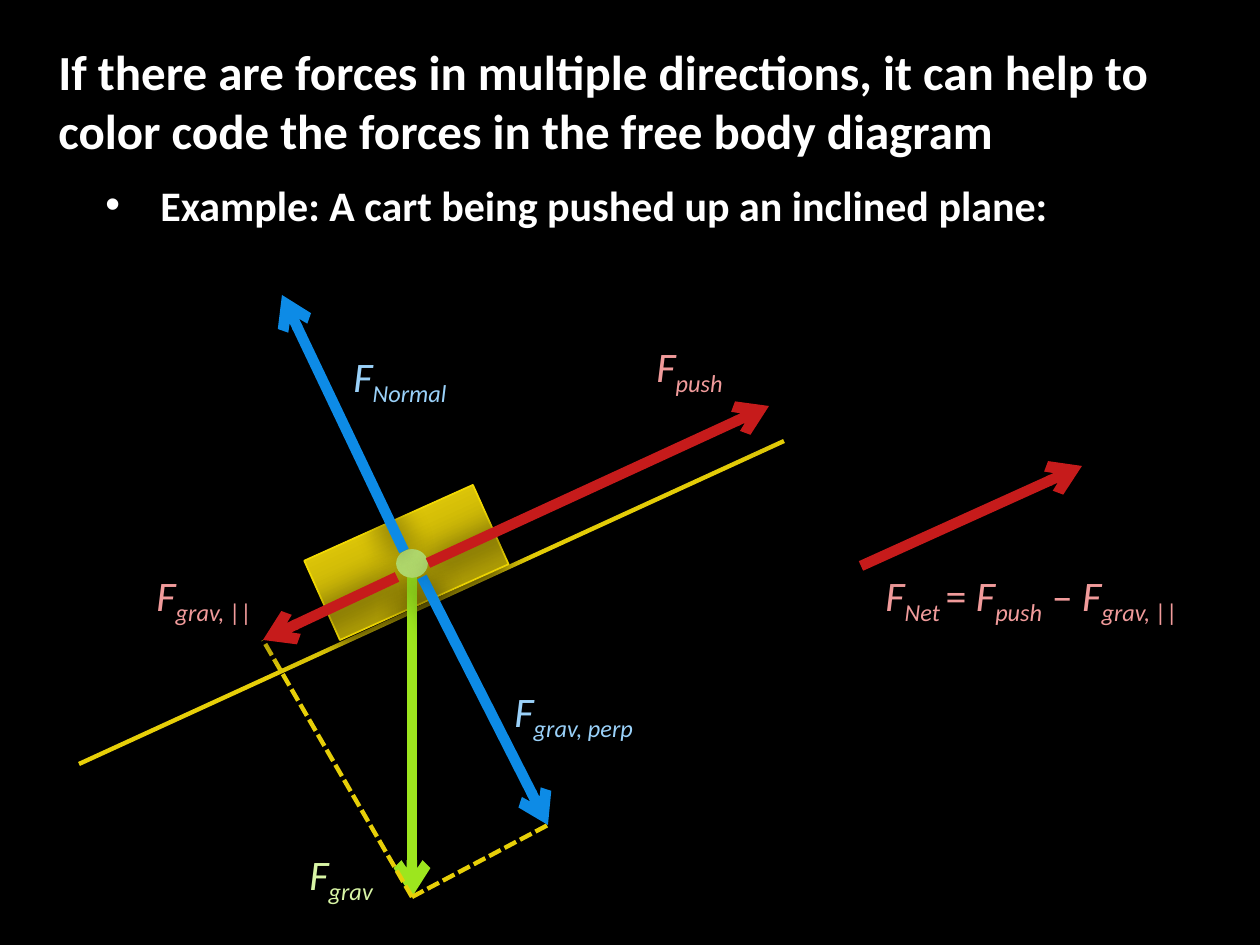
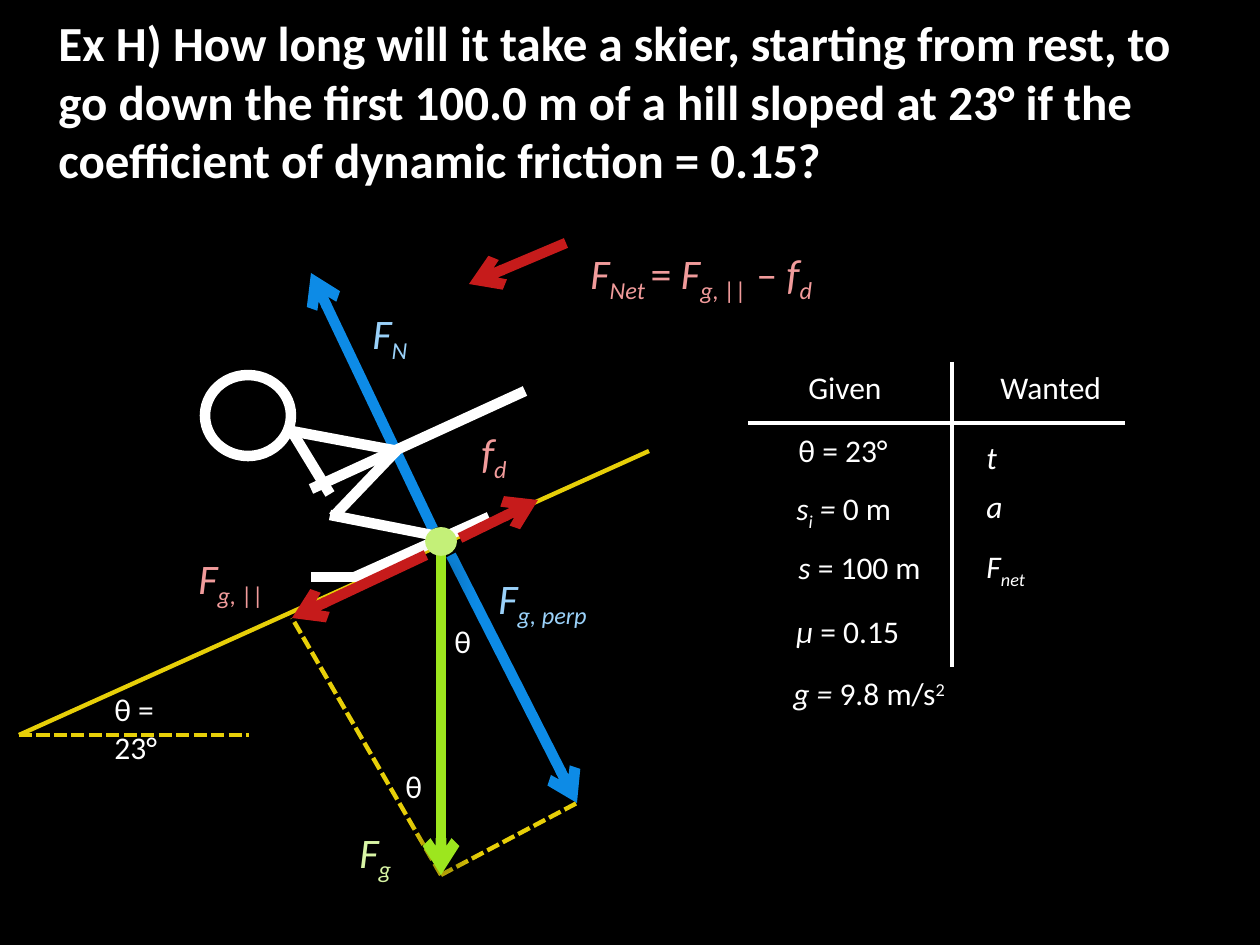
from dataclasses import dataclass
from typing import Any

from pptx import Presentation
from pptx.dml.color import RGBColor
from pptx.enum.dml import MSO_LINE
from pptx.enum.shapes import MSO_CONNECTOR, MSO_SHAPE
from pptx.enum.text import MSO_ANCHOR
from pptx.oxml import parse_xml
from pptx.oxml.ns import nsdecls
from pptx.util import Pt

STRAIGHT = MSO_CONNECTOR.STRAIGHT
RECT, OVAL = MSO_SHAPE.RECTANGLE, MSO_SHAPE.OVAL
DASHED = MSO_LINE.SQUARE_DOT
TOP, MIDDLE = MSO_ANCHOR.TOP, MSO_ANCHOR.MIDDLE

SCALE = 914400 / 126
COLORS = {
    "back": "000000", "text": "FFFFFF", "plane": "E7CF08",
    "blue": "0D8BE6", "red": "C61B1B", "green": "9DE61E", "mass": "C4F078",
    "blue_text": "9AD1F9", "red_text": "F19B9B", "green_text": "D8F5A5",
    "cart_dark": "8F8105", "cart_light": "FFE552", "cart_edge": "F2D902",
}
TITLE = {"size": Pt(28), "bold": True}
BULLET = {"size": Pt(24), "bold": True}
FORCE = {"size": Pt(24)}
NOTE = {"size": Pt(18)}
BASELINES = {"_": "-25000", "^": "30000"}

# Tips of the forces, measured from the mass
GRAVITY_TIP, PERP_TIP = (0, 334), (136, 262)
NORMAL_TIP, PARALLEL_TIP = (-130, -268), (-149, 77)


def px(value):
    return round(value * SCALE)


def rgb(name):
    return RGBColor.from_string(COLORS[name])


def add_shadow(shape):
    effects = parse_xml(
        f'<a:effectLst {nsdecls("a")}><a:outerShdw blurRad="{Pt(18)}" dist="{Pt(3)}" '
        'dir="5400000" rotWithShape="0"><a:srgbClr val="000000">'
        '<a:alpha val="80000"/></a:srgbClr></a:outerShdw></a:effectLst>')
    sp_pr = shape._element.spPr
    for old in sp_pr.findall(effects.tag):
        sp_pr.remove(old)
    sp_pr.append(effects)


def force(symbol, sub):
    return [(symbol, "i"), (sub, "i_")]


@dataclass
class Region:
    """Part of a slide with its own origin; all lengths are in px."""
    s: Any
    left: int
    top: int

    def line(self, start, end, color="plane", width=2.5, dashed=False):
        points = [px(v) for x, y in (start, end)
                  for v in (self.left + x, self.top + y)]
        cxn = self.s.shapes.add_connector(STRAIGHT, *points)
        cxn.line.color.rgb = rgb(color)
        cxn.line.width = Pt(width)
        if dashed:
            cxn.line.dash_style = DASHED
        cxn._element.spPr.append(parse_xml(f'<a:effectLst {nsdecls("a")}/>'))
        return cxn

    def arrow(self, start, end, color, shadow=True):
        cxn = self.line(start, end, color, 6)
        cxn.line._get_or_add_ln().append(
            parse_xml(f'<a:tailEnd {nsdecls("a")} type="arrow"/>'))
        if shadow:
            add_shadow(cxn)

    def shape(self, kind, x, y, w, h, edge, width, fill=None):
        sp = self.s.shapes.add_shape(
            kind, px(self.left + x), px(self.top + y), px(w), px(h))
        sp.shadow.inherit = False
        sp.line.color.rgb = rgb(edge)
        sp.line.width = Pt(width)
        if fill:
            sp.fill.solid()
            sp.fill.fore_color.rgb = rgb(fill)
        else:
            sp.fill.background()
        return sp

    def text(self, x, y, w, h, runs, fmt, color="text", anchor=TOP):
        box = self.s.shapes.add_textbox(
            px(self.left + x), px(self.top + y), px(w), px(h))
        tf = box.text_frame
        tf.word_wrap = True
        tf.vertical_anchor = anchor
        p = tf.paragraphs[0]
        for content, style in runs:
            r = p.add_run()
            r.text = content
            values = {"name": "Calibri", "italic": "i" in style, **fmt}
            for key, value in values.items():
                setattr(r.font, key, value)
            r.font.color.rgb = rgb(color)
            for mark, baseline in BASELINES.items():
                if mark in style:
                    r._r.get_or_add_rPr().set("baseline", baseline)
        return p

    def label(self, x, y, runs, color, w=194):
        self.text(x, y, w, 63, runs, FORCE, color)

    def note(self, x, y, runs, w=166):
        self.text(x, y, w, 50, runs, NOTE)


def new_slide(prs, title):
    s = prs.slides.add_slide(prs.slide_layouts[6])
    s.background.fill.solid()
    s.background.fill.fore_color.rgb = rgb("back")
    Region(s, 46, 31).text(0, 0, 1154, 139, [(title, "")], TITLE, anchor=MIDDLE)
    return s


def add_bullet(region, text):
    p = region.text(0, 0, 1045, 91, [(text, "")], BULLET)
    p_pr = p._p.get_or_add_pPr()
    p_pr.set("marL", str(px(55)))
    p_pr.set("indent", str(px(-55)))
    p_pr.append(parse_xml(f'<a:buFont {nsdecls("a")} typeface="Arial"/>'))
    p_pr.append(parse_xml(f'<a:buChar {nsdecls("a")} char="•"/>'))


# Forces around the mass, which sits at the origin of the region
def gravity_and_mass(region):
    region.arrow((0, 14), GRAVITY_TIP, "green")
    region.shape(OVAL, -15, -13, 30, 27, "mass", 1, "mass")


def forces_across_slope(region):
    region.arrow((10, 14), PERP_TIP, "blue")
    region.arrow((-8, -12), NORMAL_TIP, "blue")
    for tip in (PERP_TIP, PARALLEL_TIP):
        region.line(GRAVITY_TIP, tip, dashed=True)


def forces_along_slope(region, uphill_start, uphill_tip, shadow=True):
    region.arrow((-15, 14), PARALLEL_TIP, "red", shadow)
    region.arrow(uphill_start, uphill_tip, "red", shadow)


def force_labels(region, labels):
    for x, y, symbol, sub, color in labels:
        region.label(x, y, force(symbol, sub), color)


def cart(region):
    sp = region.shape(RECT, -98, -44, 185, 87, "cart_edge", 1)
    sp.rotation = 335.8
    stops = "".join(
        f'<a:gs pos="{pos}000"><a:srgbClr val="{COLORS[name]}"/></a:gs>'
        for pos, name in ((0, "cart_dark"), (80, "plane"), (100, "cart_light")))
    sp_pr = sp._element.spPr
    sp_pr.remove(sp_pr.find("{*}noFill"))
    sp_pr.insert(2, parse_xml(
        f'<a:gradFill {nsdecls("a")} rotWithShape="1"><a:gsLst>{stops}</a:gsLst>'
        '<a:lin ang="16200000" scaled="0"/></a:gradFill>'))
    add_shadow(sp)


def cart_diagram(region):
    region.line((-333, 201), (372, -122))
    cart(region)
    gravity_and_mass(region)
    forces_across_slope(region)
    forces_along_slope(region, (16, 0), (357, -157))
    force_labels(region, [
        (-71, -219, "F", "Normal", "blue_text"),
        (-115, 279, "F", "grav", "green_text"),
        (90, 116, "F", "grav, perp", "blue_text"),
        (-268, 0, "F", "grav, ||", "red_text"),
        (232, -229, "F", "push", "red_text"),
    ])


def skier(region):
    limbs = [
        ((-86, 36), (48, -24)),      # ski
        ((-130, 36), (-83, 36)),     # ski tip
        ((-111, -26), (1, -4)),      # shin
        ((-108, -24), (-43, -92)),   # thigh
        ((-155, -111), (-43, -90)),  # back
        ((-150, -111), (-111, -47)),  # arm
        ((-130, -52), (84, -150)),   # pole
    ]
    for start, end in limbs:
        region.line(start, end, "text", 6)
    region.shape(OVAL, -236, -166, 86, 81, "text", 6)


def skier_diagram(region):
    region.line((-422, 194), (208, -90))
    forces_across_slope(region)
    skier(region)
    gravity_and_mass(region)
    # No shadow here, so that the skis stay white
    forces_along_slope(region, (19, -3), (97, -41), shadow=False)
    force_labels(region, [
        (-81, -240, "F", "N", "blue_text"),
        (45, 25, "F", "g, perp", "blue_text"),
        (-255, 5, "F", "g, ||", "red_text"),
        (28, -121, "f", "d", "red_text"),
        (-94, 279, "F", "g", "green_text"),
    ])
    # Slope angle, and the same angle between the forces
    region.line((-422, 194), (-192, 194), dashed=True)
    region.note(-339, 143, [("θ = 23°", "")], 80)
    for x, y in ((1, 75), (-48, 220)):
        region.note(x, y, [("θ", "")], 44)


def net_force(region, runs, label_at, label_w, start, end):
    region.label(*label_at, runs, "red_text", label_w)
    region.arrow(start, end, "red")


def given_wanted(region):
    region.line((0, 61), (377, 61), "text")
    region.line((204, 0), (204, 305), "text")
    region.note(48, 0, [("Given", "")], 101)
    region.note(240, 0, [("Wanted", "")], 131)
    given = [
        (38, 63, [("θ = 23°", "")]),
        (36, 121, [("s", "i"), ("i", "i_"), (" = ", "i"), ("0 m", "")]),
        (38, 180, [("s ", "i"), ("= 100 m", "")]),
        (36, 244, [("μ ", "i"), ("= 0.15", "")]),
        (33, 306, [("g = ", "i"), ("9.8 m/s", ""), ("2", "^")]),
    ]
    wanted = [(226, 70, [("t", "i")]), (226, 119, [("a", "i")]),
              (226, 179, force("F", "net"))]
    for x, y, runs in given + wanted:
        region.note(x, y, runs, 195)


def main():
    prs = Presentation()
    prs.slide_width, prs.slide_height = px(1260), px(945)

    s = new_slide(prs, "If there are forces in multiple directions, it can help to "
                       "color code the forces in the free body diagram")
    add_bullet(Region(s, 93, 173),
               "Example: A cart being pushed up an inclined plane:")
    cart_diagram(Region(s, 412, 563))
    net_force(Region(s, 861, 466),
              force("F", "Net ") + [("= ", "")] + force("F", "push")
              + [(" – ", "")] + force("F", "grav, ||"),
              (12, 97), 444, (0, 100), (221, 0))

    s = new_slide(prs, "Ex H) How long will it take a skier, starting from rest, to go "
                       "down the first 100.0 m of a hill sloped at 23° if the "
                       "coefficient of dynamic friction = 0.15?")
    skier_diagram(Region(s, 441, 541))
    net_force(Region(s, 469, 243),
              force("F", "Net ") + [("= ", "")] + force("F", "g, ||")
              + [(" – ", "")] + force("f", "d"),
              (109, -2), 282, (97, 0), (0, 41))
    given_wanted(Region(s, 748, 362))

    prs.save("out.pptx")


if __name__ == "__main__":
    main()
